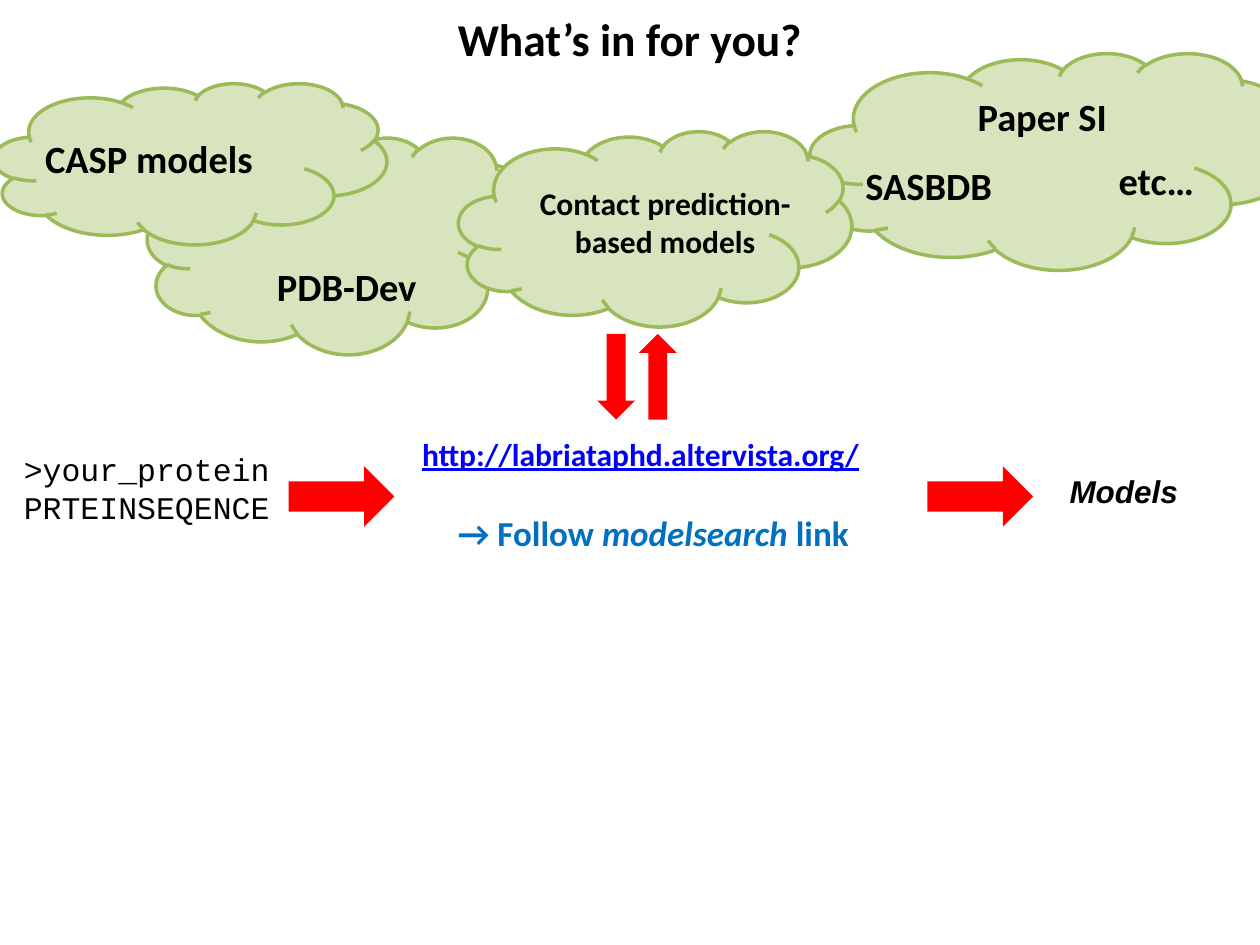
from pptx import Presentation
from pptx.util import Inches, Pt
from pptx.dml.color import RGBColor as RGB
from pptx.enum.shapes import MSO_SHAPE as Kind
from pptx.enum.text import PP_ALIGN as Align, MSO_ANCHOR as Anchor

BLACK = RGB(0, 0, 0)
RED = RGB(0xFF, 0, 0)
LINK = RGB(0, 0, 0xFF)
BLUE = RGB(0, 0x70, 0xC0)
PALE = RGB(0xD7, 0xE4, 0xBD)
GREEN = RGB(0x9B, 0xBB, 0x59)

deck = Presentation()
deck.slide_width = Inches(10)
deck.slide_height = Inches(7.5)
col = deck.slide_width / 100
row = deck.slide_height / 75
slide = deck.slides.add_slide(deck.slide_layouts[6])


def draw(kind, at, fill, edge=None, turn=0):
    x, y, w, h = at
    shape = slide.shapes.add_shape(
        kind, int(x * col), int(y * row), int(w * col), int(h * row))
    shape.shadow.inherit = False
    shape.rotation = turn
    shape.fill.solid()
    shape.fill.fore_color.rgb = fill
    if edge:
        shape.line.color.rgb = edge
        shape.line.width = Pt(2)
    else:
        shape.line.fill.background()


def write(at, lines, size, face="Calibri", color=BLACK, bold=True,
          align=Align.LEFT, anchor=Anchor.TOP):
    x, y, w, h = at
    box = slide.shapes.add_textbox(
        int(x * col), int(y * row), int(w * col), int(h * row))
    frame = box.text_frame
    frame.word_wrap = True
    frame.vertical_anchor = anchor
    for i, line in enumerate(lines):
        para = frame.add_paragraph() if i else frame.paragraphs[0]
        para.alignment = align
        for text, style in line:
            run = para.add_run()
            run.text = text
            font = run.font
            font.name = face
            font.size = Pt(size)
            font.bold = bold
            font.italic = "i" in style
            font.underline = "u" in style
            font.color.rgb = color


for at in [(11.7, 10.9, 31.2, 17.2), (-0.5, 6.6, 31.2, 12.8),
           (64.3, 4.2, 38.6, 17.2)]:
    draw(Kind.CLOUD, at, PALE, GREEN)

for name, x, y, w in [("PDB-Dev", 21, 20.4, 17.7),
                      ("CASP models", 2.6, 10.2, 22.8),
                      ("SASBDB", 67.7, 12.4, 16.2),
                      ("Paper SI", 76.6, 6.9, 16.2),
                      ("etc…", 87.8, 12, 13.8)]:
    write((x, y, w, 4.7), [[(name, "")]], 22)

write((31.2, 34, 39.3, 4), [[("http://labriataphd.altervista.org/", "u")]],
      18, color=LINK, align=Align.CENTER)
write((31.2, 40.1, 41.3, 4.3),
      [[("→ Follow ", ""), ("modelsearch", "i"), (" link", "")]],
      20, color=BLUE, align=Align.CENTER)

for x, turn in [(47.4, 0), (50.7, 180)]:
    draw(Kind.DOWN_ARROW, (x, 26.5, 3, 6.8), RED, turn=turn)
for x in (24.7, 75.4):
    draw(Kind.DOWN_ARROW, (x, 35.2, 4.8, 8.4), RED, turn=270)

write((0.9, 35.2, 26.2, 7.1), [[(">your_protein", "")], [("PRTEINSEQENCE", "")]],
      18, face="Courier New", bold=False)
write((83.9, 37, 12.1, 4), [[("Models", "i")]], 18, face="Arial")
write((0, 0, 100, 6.1), [[("What’s in for you?", "")]], 26,
      align=Align.CENTER, anchor=Anchor.MIDDLE)

draw(Kind.CLOUD, (36.4, 10.4, 31.2, 15.5), PALE, GREEN)
write((39.8, 14.1, 26, 7.1), [[("Contact prediction-based models", "")]], 18,
      align=Align.CENTER)

deck.save("out.pptx")
